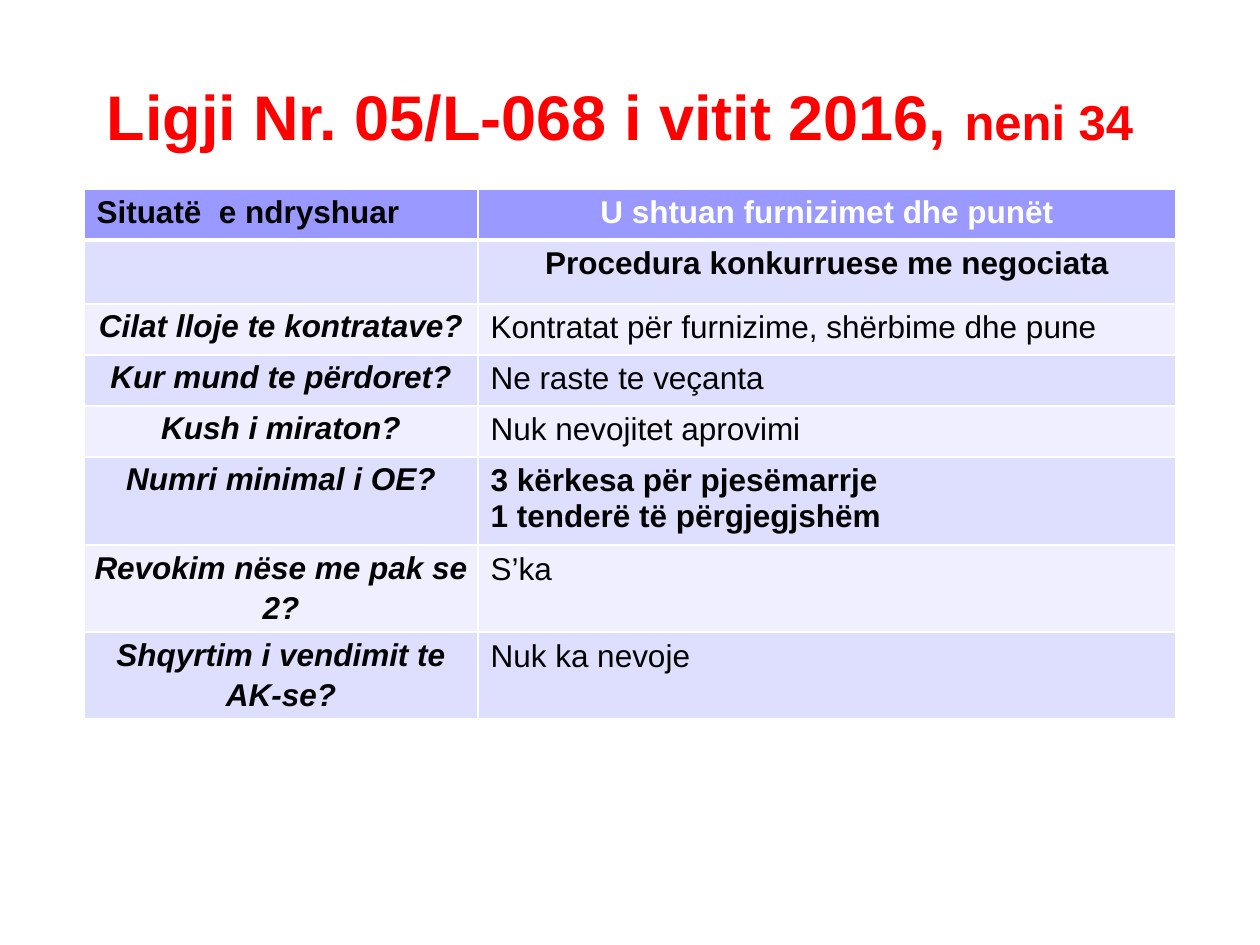
from typing import NamedTuple

from lxml import etree
from pptx import Presentation, util as u
from pptx.dml.color import RGBColor
from pptx.enum import text
from pptx.oxml.ns import qn

RED = RGBColor(0xFF, 0x00, 0x00)
BLACK = RGBColor(0x00, 0x00, 0x00)
WHITE = RGBColor(0xFF, 0xFF, 0xFF)
HEAD = RGBColor(0x99, 0x99, 0xFF)
DARK = RGBColor(0xDE, 0xDE, 0xFF)
PALE = RGBColor(0xEF, 0xEF, 0xFF)
LEFT = text.PP_ALIGN.LEFT
MID = text.PP_ALIGN.CENTER
FONT = "Arial"
COLS = (394, 698)


class Style(NamedTuple):
    align: text.PP_ALIGN
    bold: bool = True
    slant: bool = False
    color: RGBColor = BLACK
    space: float = 1.0
    tight: bool = False


class Row(NamedTuple):
    high: int
    label: str
    value: str
    left: Style
    right: Style


ASK = Style(MID, slant=True, space=1.15, tight=True)
PLAIN = Style(LEFT, bold=False)
BOLD = Style(LEFT)
TITLE = Style(MID)
ROWS = (
    Row(51, "Situatë  e ndryshuar", "U shtuan furnizimet dhe punët",
        BOLD, Style(MID, color=WHITE)),
    Row(64, "", "Procedura konkurruese me negociata", BOLD, TITLE),
    Row(51, "Cilat lloje te kontratave?",
        "Kontratat për furnizime, shërbime dhe pune", ASK, PLAIN),
    Row(51, "Kur mund te përdoret?", "Ne raste te veçanta", ASK, PLAIN),
    Row(51, "Kush i miraton?", "Nuk nevojitet aprovimi", ASK, PLAIN),
    Row(83, "Numri minimal i OE?",
        "3 kërkesa për pjesëmarrje\n1 tenderë të përgjegjshëm", ASK, BOLD),
    Row(81, "Revokim nëse me pak se 2?", "S’ka", ASK, PLAIN),
    Row(81, "Shqyrtim i vendimit te AK-se?", "Nuk ka nevoje", ASK, PLAIN),
)


def px(n: int) -> int:
    return u.Inches(n / 126)


def edge(cell, base: int) -> None:
    props = cell._tc.get_or_add_tcPr()
    sides = (("a:lnL", 1), ("a:lnR", 1), ("a:lnT", 1), ("a:lnB", base))
    for spot, (tag, width) in enumerate(sides):
        line = etree.Element(qn(tag), w=str(u.Pt(width)))
        fill = etree.SubElement(line, qn("a:solidFill"))
        etree.SubElement(fill, qn("a:srgbClr"), val=str(WHITE))
        props.insert(spot, line)


def write(cell, words: str, style: Style) -> None:
    cell.text_frame.text = words
    if style.tight:
        cell.margin_left = cell.margin_right = px(9)
        cell.margin_top = cell.margin_bottom = 0
    for para in cell.text_frame.paragraphs:
        para.alignment = style.align
        para.line_spacing = style.space
        font = para.font
        font.size = u.Pt(18)
        for run in para.runs:
            font = run.font
            font.name, font.size = FONT, u.Pt(18)
            font.bold, font.italic = style.bold, style.slant
            font.color.rgb = style.color


def title(slide) -> None:
    box = slide.shapes.add_textbox(px(64), px(65), px(1112), px(127))
    frame = box.text_frame
    frame.word_wrap = True
    frame.margin_top = px(13)
    para = frame.paragraphs[0]
    para.alignment = MID
    for words, size in (("Ligji Nr. 05/L-068 i vitit 2016, ", 36), ("neni 34", 28)):
        run = para.add_run()
        run.text = words
        font = run.font
        font.name, font.size, font.bold = FONT, u.Pt(size), True
        font.color.rgb = RED


def grid(slide) -> None:
    high = sum(row.high for row in ROWS)
    table = slide.shapes.add_table(
        len(ROWS), len(COLS), px(84), px(189), px(sum(COLS)), px(high)).table
    for col, width in zip(table.columns, COLS):
        col.width = px(width)
    for spot, row in enumerate(ROWS):
        table.rows[spot].height = px(row.high)
        shade = HEAD if spot == 0 else DARK if spot % 2 else PALE
        pairs = ((row.label, row.left), (row.value, row.right))
        for cell, (words, style) in zip(table.rows[spot].cells, pairs):
            cell.fill.solid()
            cell.fill.fore_color.rgb = shade
            edge(cell, 1 if spot else 3)
            write(cell, words, style)


def main() -> None:
    deck = Presentation()
    deck.slide_width, deck.slide_height = px(1260), px(945)
    slide = deck.slides.add_slide(deck.slide_layouts[6])
    title(slide)
    grid(slide)
    deck.save("out.pptx")


if __name__ == "__main__":
    main()
